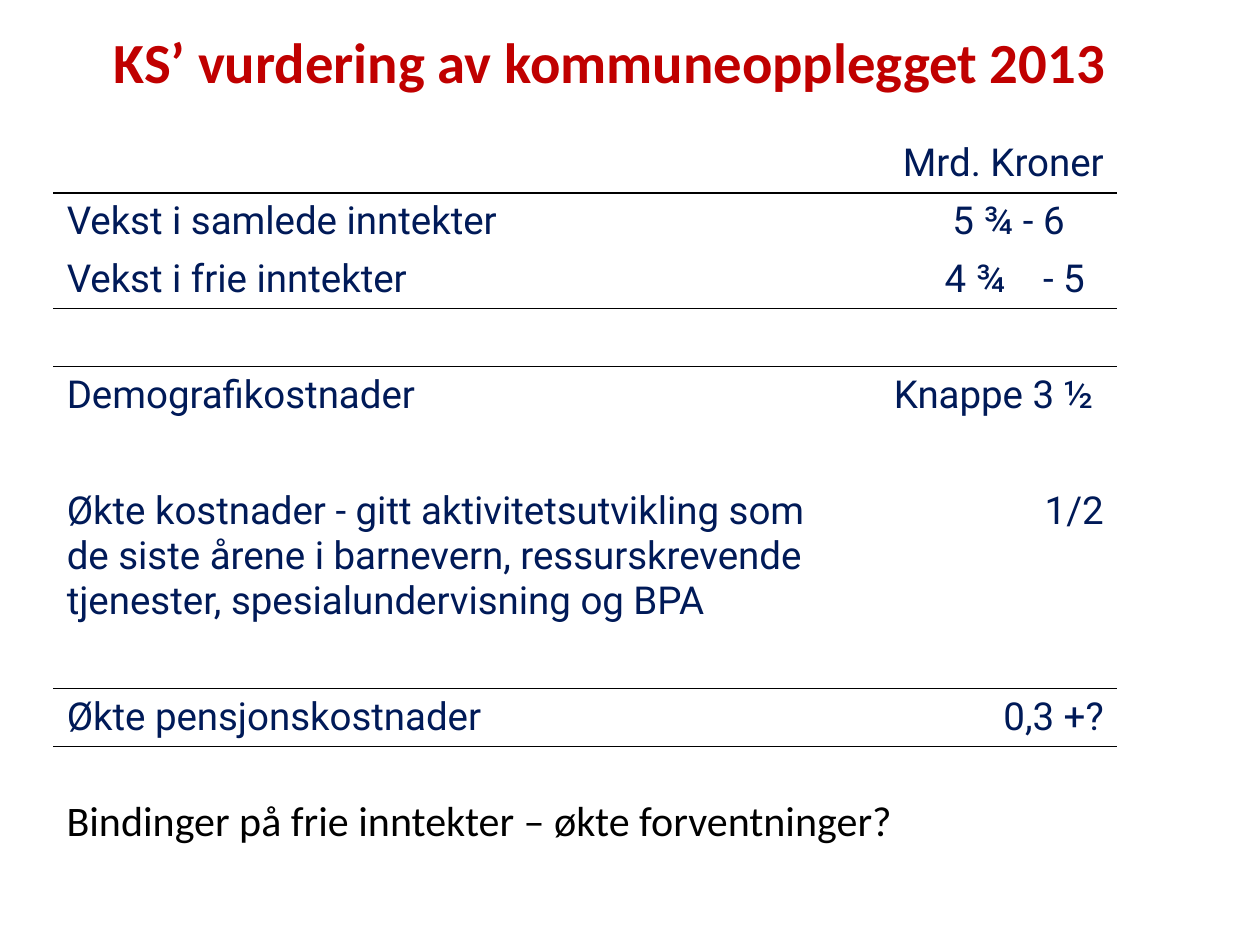
from lxml import etree
from pptx import Presentation
from pptx.dml.color import RGBColor
from pptx.enum.text import MSO_ANCHOR, PP_ALIGN
from pptx.oxml.ns import qn
from pptx.util import Inches, Pt

LEFT, RIGHT, CENTER = PP_ALIGN.LEFT, PP_ALIGN.RIGHT, PP_ALIGN.CENTER
TOP = MSO_ANCHOR.TOP

TITLE = "KS’ vurdering av kommuneopplegget 2013"
NOTE = "Bindinger på frie inntekter – økte forventninger?"
COST = ("Økte kostnader - gitt aktivitetsutvikling som de siste årene i barnevern, "
        "ressurskrevende tjenester, spesialundervisning og BPA")
# label, pieces of the value (a wide space falls between pieces), right indent
ROWS = [
    ("", ["Mrd. Kroner"], 0),
    ("Vekst i samlede inntekter", ["5 ¾ - 6"], 0.31),
    ("Vekst i frie inntekter", ["4 ¾", "- 5"], 0.15),
    ("", [], 0),
    ("Demografikostnader", ["Knappe 3 ½"], 0.08),
    ("", [], 0),
    (COST, ["1/2"], 0),
    ("", [], 0),
    ("Økte pensjonskostnader", ["0,3 +?"], 0),
]
RULES = {1, 3, 4, 8, 9}  # row edges that carry a line
EDGE, HEAD, WIDE = 0.43, 1.07, 8.43
COLS = [6.38, 2.05]
LINE, TALL, PAD = 0.46, 1.17, 0.1

HEADING = {"name": "Calibri", "size": Pt(32.4), "bold": True, "color": "C00000"}
BODY = {"name": "Roboto", "size": Pt(22), "color": "001A58"}
REMARK = {"name": "Calibri", "size": Pt(24), "color": "000000"}


def style(font, look):
    for key, val in look.items():
        if key == "color":
            font.color.rgb = RGBColor.from_string(val)
        else:
            setattr(font, key, val)


def write(para, pieces, look, align=LEFT):
    """Join the pieces with one space that is tracked out by 16 points."""
    para.alignment = align
    style(para.font, look)
    for num, piece in enumerate(pieces):
        if num:
            gap = para.add_run()
            gap.text = " "
            style(gap.font, look)
            gap.font._element.set("spc", "1600")
        run = para.add_run()
        run.text = piece
        style(run.font, look)


def place(shape, *box):
    for key, val in zip(("left", "top", "width", "height"), box):
        setattr(shape, key, Inches(val))


def rule(cell, row):
    props = cell._tc.get_or_add_tcPr()
    for tag, edge in (("a:lnT", row), ("a:lnB", row + 1)):
        if edge in RULES:
            line = etree.SubElement(props, qn(tag), w=str(Pt(1)))
            fill = etree.SubElement(line, qn("a:solidFill"))
            etree.SubElement(fill, qn("a:srgbClr"), val="000000")


def fill_table(table):
    table.first_row = table.horz_banding = False
    for col, width in zip(table.columns, COLS):
        col.width = Inches(width)
    for num, (label, value, indent) in enumerate(ROWS):
        table.rows[num].height = Inches(TALL if label == COST else LINE)
        left, right = table.cell(num, 0), table.cell(num, 1)
        for cell in (left, right):
            rule(cell, num)
            cell.fill.background()
        right.margin_right = Inches(PAD + indent)
        write(left.text_frame.paragraphs[0], [label] if label else [], BODY)
        write(right.text_frame.paragraphs[0], value, BODY, RIGHT)


def main():
    deck = Presentation()
    deck.slide_width, deck.slide_height = Inches(10), Inches(7.5)
    slide = deck.slides.add_slide(deck.slide_layouts[5])

    title = slide.shapes.title
    place(title, 0.38, 0.21, 8.92, 0.87)
    frame = title.text_frame
    frame.vertical_anchor = TOP
    frame.margin_top = frame.margin_bottom = 0
    write(frame.paragraphs[0], [TITLE], HEADING, CENTER)

    high = LINE * (len(ROWS) - 1) + TALL
    box = [Inches(n) for n in (EDGE, HEAD, WIDE, high)]
    fill_table(slide.shapes.add_table(len(ROWS), len(COLS), *box).table)

    box = [Inches(n) for n in (EDGE, 6.26, WIDE, 0.5)]
    note = slide.shapes.add_textbox(*box).text_frame
    note.word_wrap = True
    write(note.paragraphs[0], [NOTE], REMARK)

    deck.save("out.pptx")


if __name__ == "__main__":
    main()
